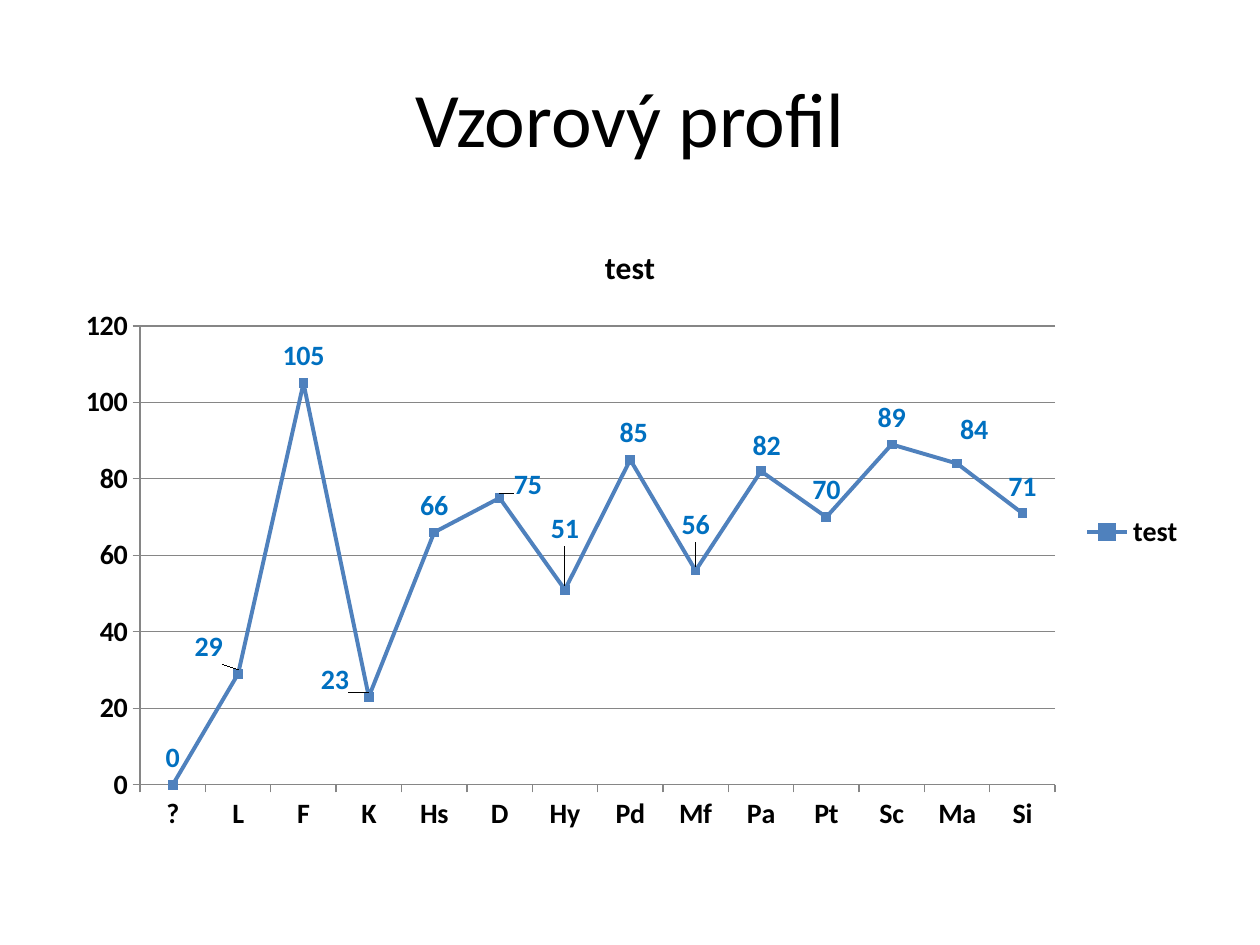
import pptx
import pptx.chart.data
import pptx.dml.color
import pptx.enum.chart
import pptx.enum.text
import pptx.oxml
import pptx.oxml.ns
import pptx.util

Pt = pptx.util.Pt
RGB = pptx.dml.color.RGBColor
enum = pptx.enum.chart

BLACK = RGB(0x00, 0x00, 0x00)
GREY = RGB(0x86, 0x86, 0x86)
BLUE = RGB(0x4F, 0x81, 0xBD)
LABEL = RGB(0x00, 0x70, 0xC0)
FACE = "Calibri"

SCORES = {
    "?": 0, "L": 29, "F": 105, "K": 23, "Hs": 66, "D": 75, "Hy": 51,
    "Pd": 85, "Mf": 56, "Pa": 82, "Pt": 70, "Sc": 89, "Ma": 84, "Si": 71,
}
# Label shifts from the spot above the point, as percent of the chart size
SHIFTS = {
    "L": (-2.6, 0), "K": (-3, 1.6), "D": (2.5, 2.2), "Hy": (0, -5.4),
    "Pd": (0.3, 0), "Mf": (0, -3), "Pa": (0.5, 0.3), "Ma": (1.5, -1.1),
}


def style(font, size, color=BLACK, bold=True):
    font.name = FACE
    font.size = Pt(size)
    font.bold = bold
    font.color.rgb = color


def layout(modes="", **parts):
    """Return a manual layout whose parts are given in percent."""
    body = modes + "".join(
        f'<c:{key} val="{val / 100:.4f}"/>' for key, val in parts.items())
    return pptx.oxml.parse_xml(
        f'<c:layout {pptx.oxml.ns.nsdecls("c")}>'
        f"<c:manualLayout>{body}</c:manualLayout></c:layout>")


def add_title(slide, left, top, width, height):
    title = slide.shapes.title
    title.left, title.top = Pt(left), Pt(top)
    title.width, title.height = Pt(width), Pt(height)
    frame = title.text_frame
    frame.vertical_anchor = pptx.enum.text.MSO_ANCHOR.MIDDLE
    para = frame.paragraphs[0]
    para.alignment = pptx.enum.text.PP_ALIGN.CENTER
    run = para.add_run()
    run.text = "Vzorový profil"
    style(run.font, 44, bold=False)


def style_axes(chart):
    for axis in (chart.category_axis, chart.value_axis):
        axis.major_tick_mark = enum.XL_TICK_MARK.OUTSIDE
        axis.minor_tick_mark = enum.XL_TICK_MARK.NONE
        style(axis.tick_labels.font, 16)
        axis.format.line.color.rgb = GREY
        axis.format.line.width = Pt(0.75)
    axis = chart.value_axis
    axis.minimum_scale, axis.maximum_scale = 0, 120
    axis.major_unit = 20
    axis.has_major_gridlines = True
    axis.major_gridlines.format.line.color.rgb = GREY
    axis.major_gridlines.format.line.width = Pt(0.75)


def style_labels(series):
    labels = series.data_labels
    labels.show_value = True
    labels.position = enum.XL_LABEL_POSITION.ABOVE
    style(labels.font, 16, LABEL)
    names = list(SCORES)
    for name, (dx, dy) in SHIFTS.items():
        label = series.points[names.index(name)].data_label
        style(label.font, 16, LABEL)
        label.position = enum.XL_LABEL_POSITION.ABOVE
    for node, (dx, dy) in zip(labels._element.xpath("c:dLbl"), SHIFTS.values()):
        node.insert(1, layout(x=dx, y=dy))


def style_line(series):
    series.smooth = False
    series.format.line.color.rgb = BLUE
    series.format.line.width = Pt(2.25)
    marker = series.marker
    marker.style = enum.XL_MARKER_STYLE.SQUARE
    marker.size = 5
    marker.format.fill.solid()
    marker.format.fill.fore_color.rgb = BLUE
    marker.format.line.color.rgb = BLUE


def add_profile(slide, left, top, width, height):
    data = pptx.chart.data.CategoryChartData()
    data.categories = list(SCORES)
    data.add_series("test", list(SCORES.values()))
    chart = slide.shapes.add_chart(
        enum.XL_CHART_TYPE.LINE_MARKERS,
        Pt(left), Pt(top), Pt(width), Pt(height), data).chart
    style(chart.font, 10, bold=False)

    chart.has_title = True
    run = chart.chart_title.text_frame.paragraphs[0].add_run()
    run.text = "test"
    style(run.font, 18)
    chart.chart_title.include_in_layout = False

    chart.has_legend = True
    chart.legend.position = enum.XL_LEGEND_POSITION.RIGHT
    chart.legend.include_in_layout = False
    style(chart.legend.font, 16)

    style_axes(chart)
    plot = chart.plots[0]
    plot.vary_by_categories = False
    style_line(plot.series[0])
    style_labels(plot.series[0])

    area = chart._chartSpace.xpath("c:chart/c:plotArea")[0]
    for old in area.xpath("c:layout"):
        area.remove(old)
    modes = ('<c:layoutTarget val="inner"/>'
             '<c:xMode val="edge"/><c:yMode val="edge"/>')
    area.insert(0, layout(modes, x=6.8, y=16.9, w=80.7, h=73.6))


def main():
    deck = pptx.Presentation()
    deck.slide_width, deck.slide_height = Pt(720), Pt(540)
    slide = deck.slides.add_slide(deck.slide_layouts[5])
    add_title(slide, 36, 21.6, 648, 90)
    add_profile(slide, 36, 126, 648, 356.4)
    deck.save("out.pptx")


if __name__ == "__main__":
    main()
